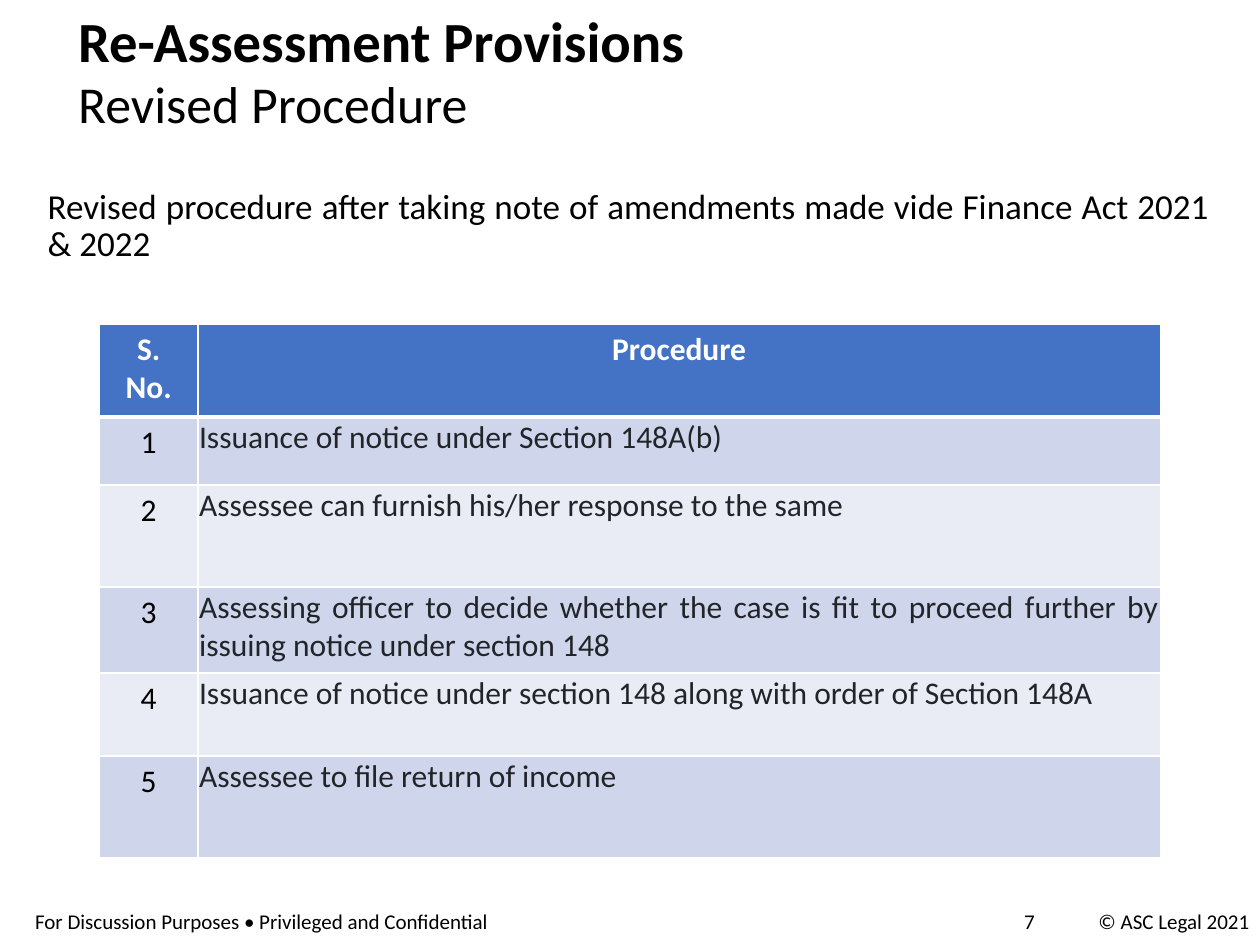
from lxml import etree
from pptx import Presentation
from pptx.dml.color import RGBColor
from pptx.enum.text import MSO_ANCHOR, MSO_AUTO_SIZE, PP_ALIGN
from pptx.oxml.ns import qn
from pptx.util import Inches, Pt

TOP = MSO_ANCHOR.TOP
NO_FIT = MSO_AUTO_SIZE.NONE
LEFT, CENTER, JUSTIFY = PP_ALIGN.LEFT, PP_ALIGN.CENTER, PP_ALIGN.JUSTIFY
TITLE_ONLY = 5
FONT = "Calibri"
BLACK, WHITE, DARK = "000000", "FFFFFF", "212529"
HEADER_FILL, BANDS = "4472C4", ("CFD5EA", "E9EBF5")

HEADINGS = ("S. No.", "Procedure")
STEPS = (
    "Issuance of notice under Section 148A(b)",
    "Assessee can furnish his/her response to the same",
    "Assessing officer to decide whether the case is fit to proceed further by "
    "issuing notice under section 148",
    "Issuance of notice under section 148 along with order of Section 148A",
    "Assessee to file return of income",
)
COLUMN_WIDTHS = (0.78, 7.64)
ROW_HEIGHTS = (0.74, 0.54, 0.81, 0.68, 0.66, 0.81)


def color(hex_string):
    return RGBColor.from_string(hex_string)


def add_run(para, text, size, hex_color=BLACK, bold=False):
    span = para.add_run()
    span.text = text
    span.font.name = FONT
    span.font.size = Pt(size)
    span.font.bold = bold
    span.font.color.rgb = color(hex_color)


def add_text(page, box, text, size, align=LEFT, wrap=True):
    shape = page.shapes.add_textbox(*map(Inches, box))
    frame = shape.text_frame
    frame.word_wrap = wrap
    para = frame.paragraphs[0]
    para.alignment = align
    add_run(para, text, size)
    return para


def place_title(page, box):
    title = page.shapes.title
    title.left, title.top, title.width, title.height = map(Inches, box)
    frame = title.text_frame
    frame.word_wrap = True
    frame.auto_size = NO_FIT
    frame.vertical_anchor = TOP
    lines = (("Re-Assessment Provisions", 32.4, True), ("Revised Procedure", 29.6, False))
    for index, (text, size, bold) in enumerate(lines):
        para = frame.add_paragraph() if index else frame.paragraphs[0]
        para.alignment = LEFT
        para.line_spacing = 0.7
        para.space_before = Pt(10 if index else 0)
        add_run(para, text, size, bold=bold)


def set_borders(cell, bottom_width):
    properties = cell._tc.get_or_add_tcPr()
    for side in ("L", "R", "T", "B"):
        width = bottom_width if side == "B" else 1
        line = etree.SubElement(properties, qn(f"a:ln{side}"), w=str(Pt(width)))
        fill = etree.SubElement(line, qn("a:solidFill"))
        etree.SubElement(fill, qn("a:srgbClr"), val=WHITE)


def fill_cell(cell, text, fill, text_color, align=CENTER, bold=False, bottom_width=1):
    set_borders(cell, bottom_width)
    cell.fill.solid()
    cell.fill.fore_color.rgb = color(fill)
    para = cell.text_frame.paragraphs[0]
    para.alignment = align
    add_run(para, text, 18, text_color, bold)


def place_table(page, box):
    table = page.shapes.add_table(
        len(ROW_HEIGHTS), len(COLUMN_WIDTHS), *map(Inches, box)).table
    for column, width in zip(table.columns, COLUMN_WIDTHS):
        column.width = Inches(width)
    for row, height in zip(table.rows, ROW_HEIGHTS):
        row.height = Inches(height)

    # Header row
    for index, heading in enumerate(HEADINGS):
        fill_cell(table.cell(0, index), heading, HEADER_FILL, WHITE,
                  bold=True, bottom_width=3)

    # Numbered steps
    for number, step in enumerate(STEPS, 1):
        band = BANDS[(number - 1) % 2]
        fill_cell(table.cell(number, 0), str(number), band, BLACK)
        cell = table.cell(number, 1)
        fill_cell(cell, step, band, DARK, JUSTIFY)
        cell.margin_left = cell.margin_right = Inches(0.01)
        cell.margin_top = cell.margin_bottom = Inches(0.01)
        cell.text_frame.paragraphs[0].space_after = Pt(8)


def place_footer(page, top):
    add_text(page, (0.18, top, 3.92, 0.3),
             "For Discussion Purposes • Privileged and Confidential", 12)
    add_text(page, (8.03, top, 0.4, 0.3), "7", 12, wrap=False)
    add_text(page, (8.62, top, 1.47, 0.3), "© ASC Legal 2021", 12)


def main():
    deck = Presentation()
    deck.slide_width, deck.slide_height = Inches(10), Inches(7.5)
    page = deck.slides.add_slide(deck.slide_layouts[TITLE_ONLY])
    place_footer(page, 7.16)
    intro = add_text(page, (0.28, 1.45, 9.42, 0.8),
                     "Revised procedure after taking note of amendments made vide "
                     "Finance Act 2021 & 2022", 20, JUSTIFY)
    intro.line_spacing = 0.9
    place_title(page, (0.52, 0.14, 7.42, 1))
    place_table(page, (0.79, 2.57, 8.42, 4.24))
    deck.save("out.pptx")


if __name__ == "__main__":
    main()
